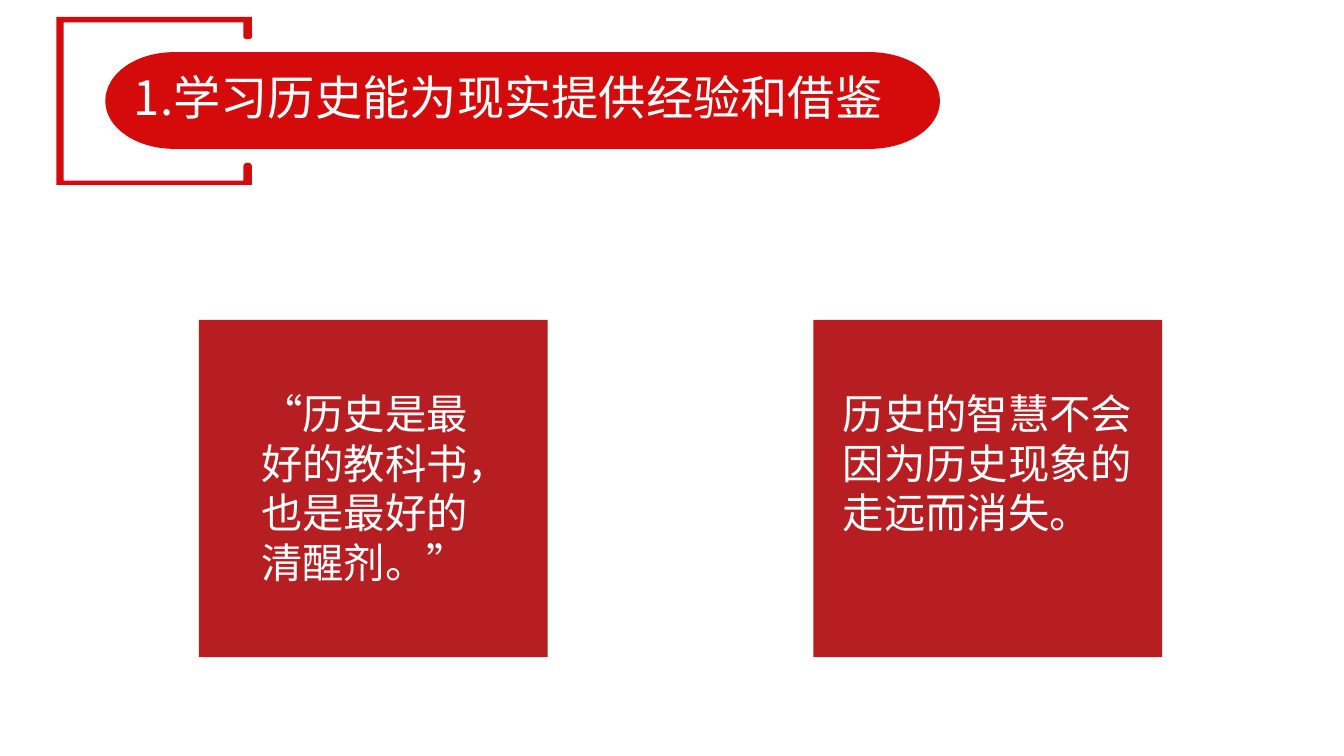
from lxml.etree import SubElement
from pptx import Presentation
from pptx.dml.color import RGBColor
from pptx.enum.lang import MSO_LANGUAGE_ID as Language
from pptx.enum.shapes import MSO_SHAPE as Preset
from pptx.enum.text import MSO_AUTO_SIZE as AutoSize
from pptx.oxml.ns import qn
from pptx.util import Inches, Pt

COLORS = {"title": "D50B0B", "card": "B71E22", "text": "FFFFFF"}
FONT = "Noto Sans CJK SC"


class SlideBuilder:
    """Holds the style and the current slide, and adds its elements."""

    def __init__(self, slide, colors, font):
        self.slide = slide
        self.colors = colors
        self.font = font

    def paint(self, shape, color):
        shape.shadow.inherit = False
        shape.fill.solid()
        shape.fill.fore_color.rgb = RGBColor.from_string(self.colors[color])
        shape.line.fill.background()

    def outline(self, start, segments, color):
        points = [(Inches(x), Inches(y)) for segment in segments for x, y in segment]
        builder = self.slide.shapes.build_freeform(Inches(start[0]), Inches(start[1]))
        builder.add_line_segments(points, close=True)
        shape = builder.convert_to_shape()
        lines = iter(list(shape._element.iter(qn("a:lnTo"))))
        for segment in segments:
            first, *others = [next(lines) for _ in segment]
            if others:
                first.tag = qn("a:cubicBezTo")
            for line in others:
                first.append(line[0])
                line.getparent().remove(line)
        self.paint(shape, color)

    def card(self, left, top, width, height):
        box = [Inches(value) for value in (left, top, width, height)]
        self.paint(self.slide.shapes.add_shape(Preset.RECTANGLE, *box), "card")

    def text(self, words, left, top, width, height, size, margins=(0.1, 0.05), spacing=None):
        box = [Inches(value) for value in (left, top, width, height)]
        frame = self.slide.shapes.add_textbox(*box).text_frame
        frame.word_wrap = True
        frame.auto_size = AutoSize.SHAPE_TO_FIT_TEXT
        frame.margin_left = frame.margin_right = Inches(margins[0])
        frame.margin_top = frame.margin_bottom = Inches(margins[1])
        paragraph = frame.paragraphs[0]
        paragraph.text = words
        paragraph.line_spacing = spacing
        font = paragraph.font
        font.size = Pt(size)
        font.name = self.font
        font.language_id = Language.SIMPLIFIED_CHINESE
        font.color.rgb = RGBColor.from_string(self.colors["text"])
        properties = paragraph._p.pPr.find(qn("a:defRPr"))
        SubElement(properties, qn("a:ea")).set("typeface", self.font)


def main():
    presentation = Presentation()
    presentation.slide_width = Inches(12.64)
    presentation.slide_height = Inches(7.11)
    slide = presentation.slides.add_slide(presentation.slide_layouts[6])
    builder = SlideBuilder(slide, COLORS, FONT)

    bracket = [
        [(0.53, 1.74)],
        [(0.53, 0.16)],
        [(2.37, 0.16)],
        [(2.37, 0.35)],
        [(2.37, 0.36), (2.35, 0.37), (2.33, 0.37)],
        [(2.31, 0.37), (2.29, 0.36), (2.29, 0.35)],
        [(2.29, 0.21)],
        [(0.6, 0.21)],
        [(0.6, 1.7)],
        [(2.29, 1.7)],
        [(2.29, 1.56)],
        [(2.29, 1.54), (2.31, 1.53), (2.33, 1.53)],
        [(2.35, 1.53), (2.37, 1.54), (2.37, 1.56)],
    ]
    builder.outline((2.37, 1.74), bracket, "title")

    pill = [
        [(0.99, 0.69), (1.28, 0.49), (1.64, 0.49)],
        [(8.18, 0.49)],
        [(8.54, 0.49), (8.84, 0.69), (8.84, 0.95)],
        [(8.84, 1.2), (8.54, 1.4), (8.18, 1.4)],
        [(1.64, 1.4)],
        [(1.28, 1.4), (0.99, 1.2), (0.99, 0.95)],
    ]
    builder.outline((0.99, 0.95), pill, "title")
    builder.text("1.学习历史能为现实提供经验和借鉴", 1.12, 0.66, 7.6, 0.59, 32, (0.14, 0.07), 0.83)

    cards = [
        (1.87, 2.36, 2.29, 1.99, "“历史是最好的教科书，也是最好的清醒剂。”"),
        (7.65, 7.83, 2.94, 1.51, "历史的智慧不会因为历史现象的走远而消失。"),
    ]
    for card_left, text_left, width, height, words in cards:
        builder.card(card_left, 3.01, 3.28, 3.17)
        builder.text(words, text_left, 3.6, width, height, 28)

    presentation.save("out.pptx")


if __name__ == "__main__":
    main()
